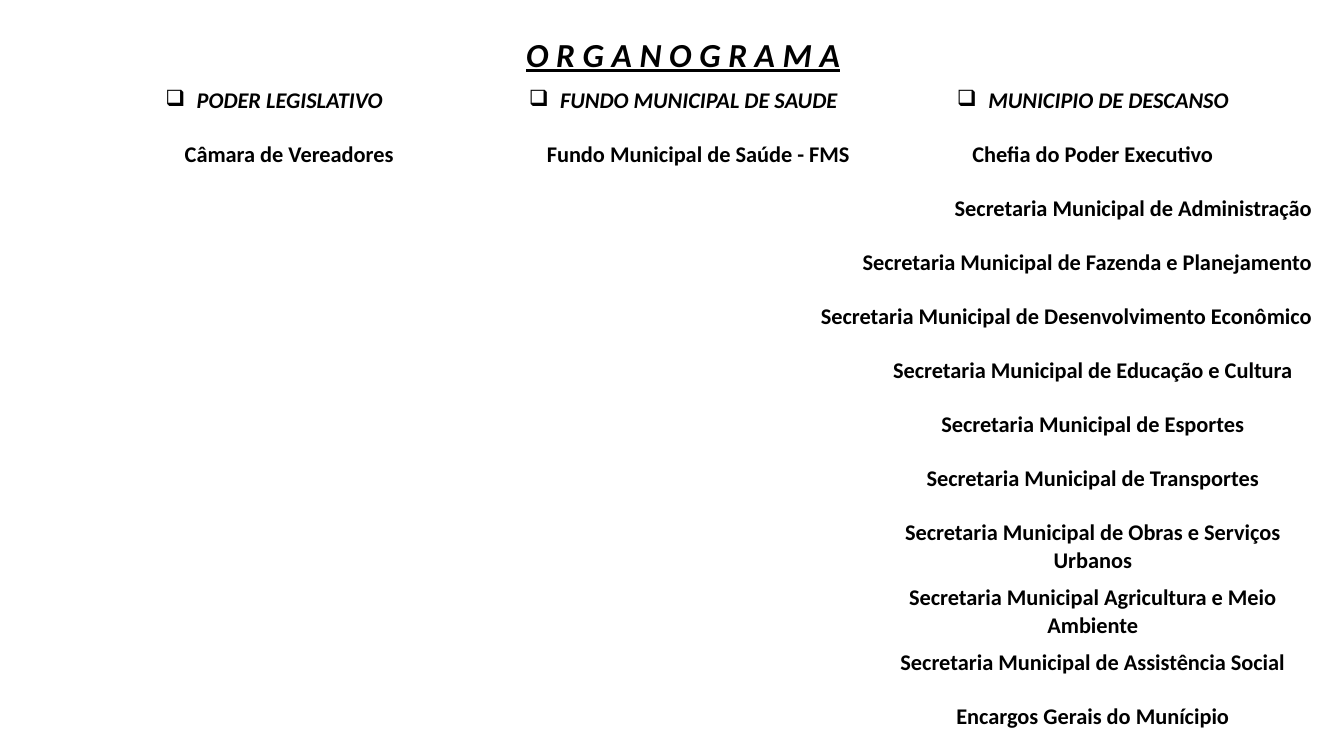
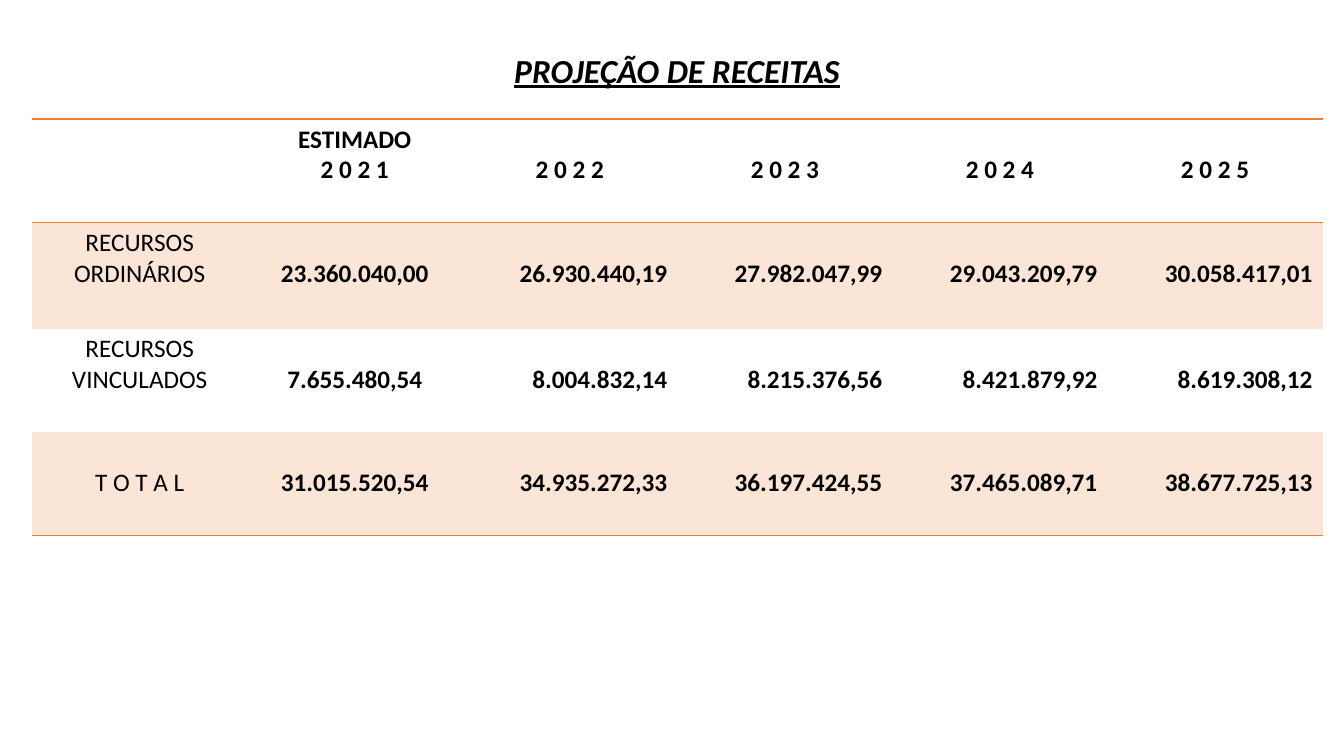
"""Builds the municipal organisation chart and the revenue projection slides."""
from lxml import etree
from pptx import Presentation
from pptx import util as u
from pptx.dml.color import RGBColor
from pptx.enum import text
from pptx.oxml import ns

FONT = "Calibri"
BLACK, ORANGE, PEACH = "000000", "ED7D31", "FBE5D6"
NO_STYLE = "{2D5ABB26-0587-4C30-8999-92F81FD0307C}"
CENTER, RIGHT = text.PP_ALIGN.CENTER, text.PP_ALIGN.RIGHT
TITLE = dict(size=24, italic=True, underline=True)


def add_grid(slide, left, top, widths, heights):
    frame = slide.shapes.add_table(
        len(heights), len(widths), u.Cm(left), u.Cm(top), u.Cm(sum(widths)), u.Cm(sum(heights)))
    frame.element.find(".//" + ns.qn("a:tableStyleId")).text = NO_STYLE
    grid = frame.table
    grid.first_row = grid.horz_banding = False
    for column, width in zip(grid.columns, widths):
        column.width = u.Cm(width)
    for row, height in zip(grid.rows, heights):
        row.height = u.Cm(height)
    for cell in grid.iter_cells():
        cell.fill.background()
    return grid


def write(cell, words, size, align=CENTER, bold=True, italic=False, underline=False):
    cell.text_frame.text = words
    for paragraph in cell.text_frame.paragraphs:
        paragraph.alignment = align
        for run in paragraph.runs:
            font = run.font
            font.name, font.size = FONT, u.Pt(size)
            font.bold, font.italic, font.underline = bold, italic, underline
            font.color.rgb = RGBColor.from_string(BLACK)


deck = Presentation()
deck.slide_width, deck.slide_height = u.Cm(33.87), u.Cm(19.05)
blank = deck.slide_layouts[6]

powers = ["PODER LEGISLATIVO", "FUNDO MUNICIPAL DE SAUDE", "MUNICIPIO DE DESCANSO"]
heads = ["Câmara de Vereadores", "Fundo Municipal de Saúde - FMS", "Chefia do Poder Executivo"]
wide_departments = [
    "Secretaria Municipal de Administração",
    "Secretaria Municipal de Fazenda e Planejamento",
    "Secretaria Municipal de Desenvolvimento Econômico",
]
departments = [
    "Secretaria Municipal de Educação e Cultura",
    "Secretaria Municipal de Esportes",
    "Secretaria Municipal de Transportes",
    "Secretaria Municipal de Obras e Serviços Urbanos",
    "Secretaria Municipal Agricultura e Meio Ambiente",
    "Secretaria Municipal de Assistência Social",
    "Encargos Gerais do Munícipio",
]

organogram = add_grid(deck.slides.add_slide(blank), 1.14, 0.76, [11.53, 9.09, 11.56],
                      [1.32] + [1.36] * 8 + [1.64] * 2 + [1.36] * 2)
write(organogram.cell(0, 1), "O R G A N O G R A M A", **TITLE)
for col, (power, head) in enumerate(zip(powers, heads)):
    power_cell, head_cell = organogram.cell(1, col), organogram.cell(2, col)
    write(power_cell, power, 16, italic=True)
    bullet = power_cell.text_frame.paragraphs[0]._p.get_or_add_pPr()
    bullet.set("marL", str(u.Cm(0.79)))
    bullet.set("indent", str(u.Cm(-0.79)))
    etree.SubElement(bullet, ns.qn("a:buChar"), char="❑")
    write(head_cell, head, 16)
    if col < 2:
        head_cell.margin_left = u.Cm(1.02)
for row, department in enumerate(wide_departments, 3):
    organogram.cell(row, 1).merge(organogram.cell(row, 2))
    write(organogram.cell(row, 1), department, 16, RIGHT)
for row, department in enumerate(departments, 6):
    write(organogram.cell(row, 2), department, 16)

projection = [
    ["", "ESTIMADO\n2 0 2 1", "2 0 2 2", "2 0 2 3", "2 0 2 4", "2 0 2 5"],
    ["RECURSOS ORDINÁRIOS", "23.360.040,00", "26.930.440,19", "27.982.047,99",
     "29.043.209,79", "30.058.417,01"],
    ["RECURSOS VINCULADOS", "7.655.480,54", "8.004.832,14", "8.215.376,56",
     "8.421.879,92", "8.619.308,12"],
    ["T O T A L", "31.015.520,54", "34.935.272,33", "36.197.424,55",
     "37.465.089,71", "38.677.725,13"],
]
ruled_sides = {0: ["lnB", "lnT"], 3: ["lnB"]}
two_line_entries = ("ESTIMADO", "RECURSOS")

revenue_slide = deck.slides.add_slide(blank)
page_frame = add_grid(revenue_slide, 0.56, 1.17, [11.84, 9.32, 11.86], [2.03, 14.2, 1.04])
write(page_frame.cell(0, 1), "PROJEÇÃO DE RECEITAS", **TITLE)
for row in (1, 2):
    page_frame.cell(row, 0).merge(page_frame.cell(row, 2))

revenue = add_grid(revenue_slide, 0.81, 3, [5.42] * 6, [2.61, 2.67, 2.61, 2.61])
for row, entries in enumerate(projection):
    for col, entry in enumerate(entries):
        cell = revenue.cell(row, col)
        write(cell, entry, 18, RIGHT if row and col > 1 else CENTER, bold=col > 0)
        if entry and not entry.startswith(two_line_entries):
            cell.margin_top = u.Cm(0.9)
        if row % 2:
            cell.fill.solid()
            cell.fill.fore_color.rgb = RGBColor.from_string(PEACH)
        for side in ruled_sides.get(row, []):
            rule = etree.Element(ns.qn("a:" + side), w=str(u.Pt(1)))
            paint = etree.SubElement(rule, ns.qn("a:solidFill"))
            etree.SubElement(paint, ns.qn("a:srgbClr"), val=ORANGE)
            cell._tc.get_or_add_tcPr().insert(0, rule)

deck.save("out.pptx")
